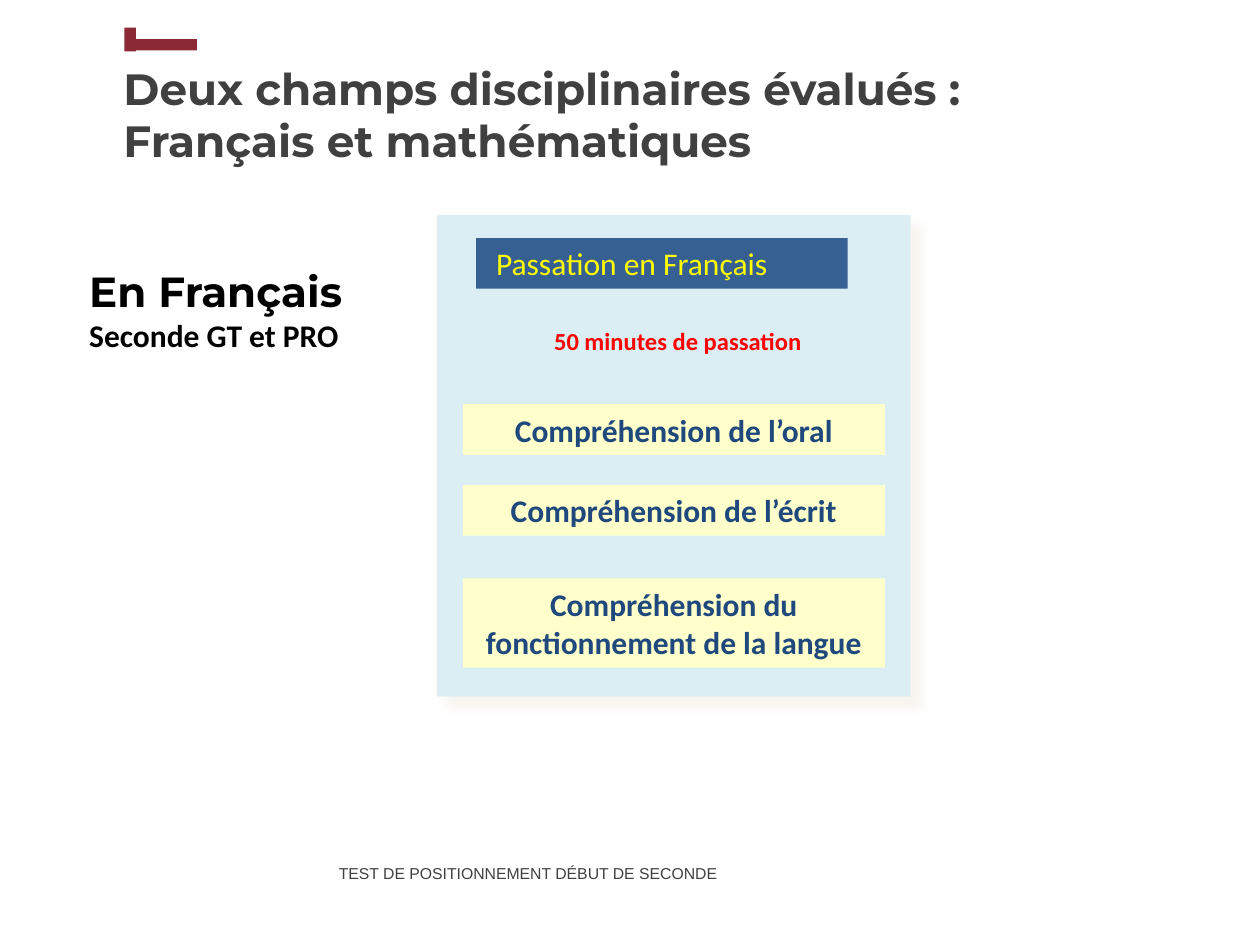
from lxml.etree import SubElement
from pptx import Presentation
from pptx.dml.color import RGBColor
from pptx.enum.shapes import MSO_SHAPE as Shape
from pptx.enum.text import MSO_ANCHOR as Anchor, PP_ALIGN as Align
from pptx.oxml.ns import qn
from pptx.util import Cm, Pt

GREY = RGBColor(0x40, 0x40, 0x40)
BLACK = RGBColor(0, 0, 0)
RED = RGBColor(0xFF, 0, 0)
YELLOW = RGBColor(0xFF, 0xFF, 0)
NAVY = RGBColor(0x1F, 0x49, 0x7D)
BLUE = RGBColor(0x37, 0x60, 0x92)
PALE_BLUE = RGBColor(0xDB, 0xEE, 0xF4)
CREAM = RGBColor(0xFF, 0xFF, 0xCC)
BURGUNDY = RGBColor(0x8B, 0x29, 0x34)
SHADOW = "EEECE1"

TITLE = ["Deux champs disciplinaires évalués :", "Français et mathématiques"]
FOOTER = "TEST DE POSITIONNEMENT DÉBUT DE SECONDE"
SUBJECT, LEVELS = "En Français", "Seconde GT et PRO"
HEADER = "Passation en Français"
DURATION = "50 minutes de passation"
SKILLS = [  # text, top, height in cm
    ("Compréhension de l’oral", 8.15, 1.02),
    ("Compréhension de l’écrit", 9.78, 1.02),
    ("Compréhension du fonctionnement de la langue", 11.66, 1.8),
]
CORNER_MARK = [(2.51, 0.56, 0.23, 0.48), (2.62, 0.79, 1.35, 0.23)]
PANEL = (8.81, 4.34, 9.55, 9.7)
SKILL_WIDTH = 8.51

prs = Presentation()
prs.slide_width, prs.slide_height = Cm(25.4), Cm(19.05)
slide = prs.slides.add_slide(prs.slide_layouts[6])


def add_block(box, color):
    block = slide.shapes.add_shape(Shape.RECTANGLE, *map(Cm, box))
    block.shadow.inherit = False
    block.fill.solid()
    block.fill.fore_color.rgb = color
    block.line.fill.background()
    return block


def add_label(box, anchor=Anchor.TOP):
    label = slide.shapes.add_textbox(*map(Cm, box))
    label.text_frame.word_wrap = True
    label.text_frame.vertical_anchor = anchor
    return label


def write(paragraph, text, size, color, font="Calibri", bold=True, align=Align.LEFT):
    paragraph.alignment = align
    run = paragraph.add_run()
    run.text = text
    run.font.name, run.font.size, run.font.bold = font, Pt(size), bold
    run.font.color.rgb = color


def cast_shadow(shape):
    """Give the shape a soft shadow towards the lower right."""
    effects = shape._element.spPr.find(qn("a:effectLst"))
    shadow = SubElement(effects, qn("a:outerShdw"), blurRad=str(Pt(5)),
                        dist=str(Pt(8.5)), dir=str(45 * 60000),
                        algn="tl", rotWithShape="0")
    color = SubElement(shadow, qn("a:srgbClr"), val=SHADOW)
    SubElement(color, qn("a:alpha"), val="50000")


footer = add_label((6.58, 17.07, 9.86, 1.88)).text_frame
footer.margin_top = Cm(0.25)
footer.paragraphs[0].line_spacing = Pt(13.2)
write(footer.paragraphs[0], FOOTER, 9, GREY, "Arial", bold=False)

title = add_label((2.24, 0.51, 21.89, 3.58), Anchor.MIDDLE).text_frame.paragraphs[0]
for number, line in enumerate(TITLE):
    if number:
        title.add_line_break()
    write(title, line, 25, GREY, "Montserrat")

for bar in CORNER_MARK:
    add_block(bar, BURGUNDY)

cast_shadow(add_block(PANEL, PALE_BLUE))

header = add_block((9.6, 4.8, 7.49, 1.02), BLUE).text_frame
header.margin_left = Cm(0.4)
write(header.paragraphs[0], HEADER, 18, YELLOW, bold=False)

skill_left = PANEL[0] + (PANEL[2] - SKILL_WIDTH) / 2
for skill, top, height in SKILLS:
    card = add_block((skill_left, top, SKILL_WIDTH, height), CREAM)
    write(card.text_frame.paragraphs[0], skill, 18, NAVY, align=Align.CENTER)

duration = add_label((10.26, 6.45, 6.81, 0.86)).text_frame
write(duration.paragraphs[0], DURATION, 14, RED, align=Align.CENTER)

subject = add_label((1.55, 5.23, 6.48, 2.06)).text_frame
write(subject.paragraphs[0], SUBJECT, 24, BLACK, "Montserrat")
write(subject.add_paragraph(), LEVELS, 18, BLACK)

prs.save("out.pptx")
